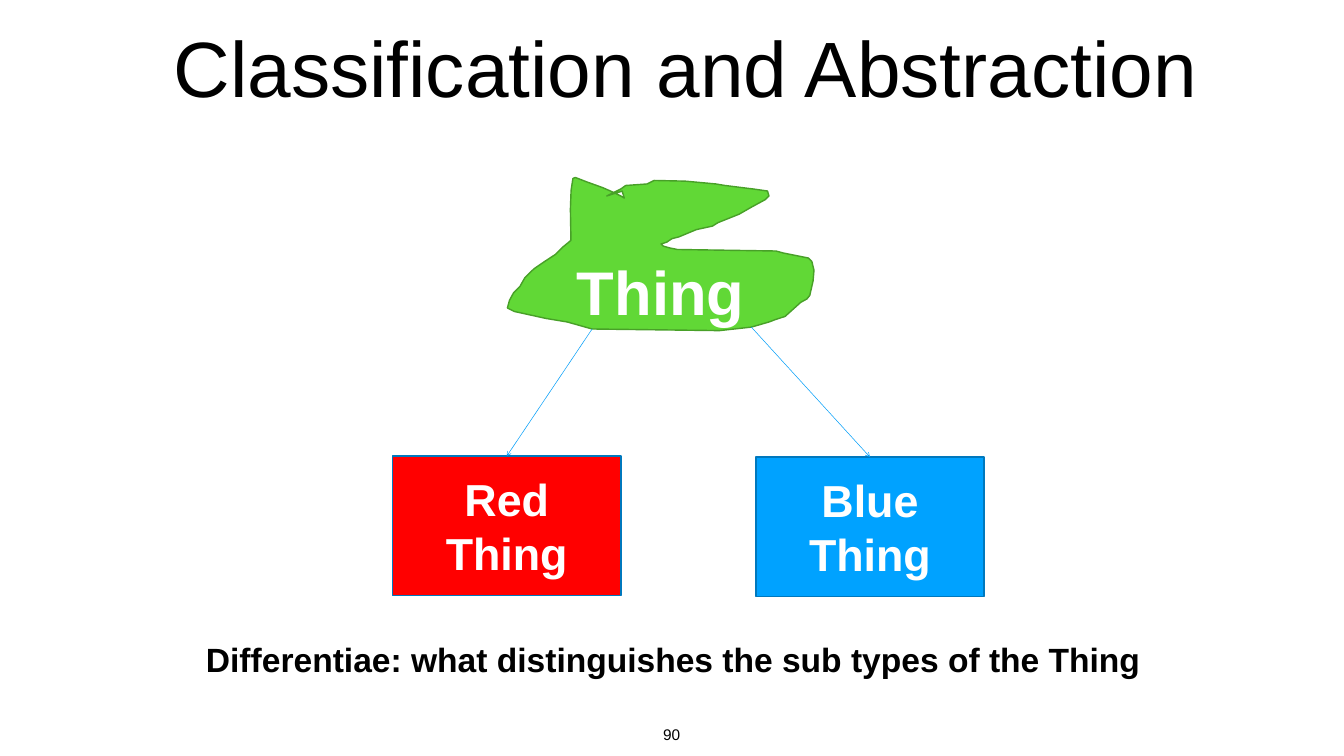
import dataclasses
import typing

import lxml.etree
import pptx
import pptx.dml.color
import pptx.enum.shapes
import pptx.enum.text
import pptx.oxml.ns
import pptx.util

Pt = pptx.util.Pt
Align = pptx.enum.text.PP_ALIGN
Anchor = pptx.enum.text.MSO_ANCHOR
Fit = pptx.enum.text.MSO_AUTO_SIZE


@dataclasses.dataclass(frozen=True)
class Theme:
    font: str = "Arial"
    black: str = "000000"
    white: str = "FFFFFF"
    green: str = "61D836"
    moss: str = "48A028"
    red: str = "FF0000"
    blue: str = "00A2FF"
    navy: str = "0078BD"
    sky: str = "009EF9"
    title: int = 112
    root: int = 88
    kind: int = 64
    note: int = 48
    page: int = 22
    edge: float = 2
    link: float = 0.75


THEME = Theme()


class Kind(typing.NamedTuple):
    text: str
    left: float
    top: float
    fill: str
    start: tuple[float, float]


class Note(typing.NamedTuple):
    text: str
    left: float
    top: float
    width: float
    height: float
    size: int
    bold: bool
    inset: tuple[float, float]


BOX = (326, 199.4)

KINDS = [
    Kind("Red Thing", 561, 651.6, THEME.red, (846, 470)),
    Kind("Blue Thing", 1080, 653, THEME.blue, (1073.5, 467.3)),
]

NOTES = [
    Note("Differentiae: what distinguishes the sub types of the Thing",
         279.4, 908.6, 1365.8, 65.5, THEME.note, True, (7.2, 3.6)),
    Note("90", 940.3, 1029.6, 38.9, 38.2, THEME.page, False, (5.76, 5.76)),
]

BLOB = [
    (866.9, 280), (887, 270), (894, 265), (924.5, 262.8), (934.6, 257.8),
    (979, 258.8), (1023, 262.8), (1036, 265), (1076.4, 270), (1096.6, 272.9),
    (1098.7, 280), (1093.7, 285), (1073.5, 296), (1056, 306), (1026, 318),
    (1018, 323), (995, 328), (970, 338.4), (960, 341), (952.6, 346),
    (944.6, 348.5), (947.5, 351.5), (956, 354), (967.7, 356.4),
    (1108.8, 358.6), (1119, 361.4), (1155, 368.6), (1160, 373.7),
    (1163, 386), (1161.7, 401.3), (1157, 422), (1153, 427), (1144, 432),
    (1121.8, 452), (1106.6, 457), (1098.7, 460), (1073.5, 467.3),
    (1028, 472.3), (846, 470), (810.7, 460), (780.5, 455), (735, 445),
    (725, 440), (728, 429), (734, 418), (743, 409), (750, 396.7),
    (763, 384), (778, 373.7), (793.4, 363.6), (803.5, 353.5),
    (815.8, 343.4), (815, 299), (816, 272), (818.6, 255), (822, 253.5),
    (838.8, 260), (861, 268), (877, 275), (887, 280), (892, 283), (889, 273),
]


def tint(code: str) -> pptx.dml.color.RGBColor:
    return pptx.dml.color.RGBColor.from_string(code)


def write(shape, text: str, size: int, color: str, bold: bool,
          anchor, inset: tuple[float, float] = (7.2, 3.6)) -> None:
    frame = shape.text_frame
    frame.text = text
    frame.vertical_anchor = anchor
    frame.margin_left = frame.margin_right = Pt(inset[0])
    frame.margin_top = frame.margin_bottom = Pt(inset[1])
    line = frame.paragraphs[0]
    line.alignment = Align.CENTER
    font = line.runs[0].font
    font.name = THEME.font
    font.size = Pt(size)
    font.bold = bold
    font.color.rgb = tint(color)


def paint(shape, fill: str, edge: str) -> None:
    shape.shadow.inherit = False
    shape.fill.solid()
    shape.fill.fore_color.rgb = tint(fill)
    shape.line.color.rgb = tint(edge)
    shape.line.width = Pt(THEME.edge)


def add_title(slide, text: str) -> None:
    title = slide.shapes.title
    title.left, title.top = Pt(195.8), Pt(0)
    title.width, title.height = Pt(1566.7), Pt(187.9)
    write(title, text, THEME.title, THEME.black, False,
          Anchor.MIDDLE, (5.76, 5.76))
    title.text_frame.auto_size = Fit.NONE


def add_blob(slide, text: str) -> None:
    path = slide.shapes.build_freeform(
        Pt(BLOB[0][0]), Pt(BLOB[0][1]), scale=1.0)
    path.add_line_segments([(Pt(x), Pt(y)) for x, y in BLOB[1:]], close=True)
    blob = path.convert_to_shape()
    paint(blob, THEME.green, THEME.moss)
    write(blob, text, THEME.root, THEME.white, True, Anchor.BOTTOM)


def add_kind(slide, kind: Kind):
    box = slide.shapes.add_shape(
        pptx.enum.shapes.MSO_SHAPE.RECTANGLE,
        Pt(kind.left), Pt(kind.top), Pt(BOX[0]), Pt(BOX[1]))
    paint(box, kind.fill, THEME.navy)
    write(box, kind.text, THEME.kind, THEME.white, True, Anchor.MIDDLE)
    box.text_frame.word_wrap = True
    return box


def add_link(slide, start: tuple[float, float], box) -> None:
    x, y = start
    link = slide.shapes.add_connector(
        pptx.enum.shapes.MSO_CONNECTOR.STRAIGHT,
        Pt(x), Pt(y), box.left + box.width // 2, box.top)
    link.end_connect(box, 0)
    link.line.color.rgb = tint(THEME.sky)
    link.line.width = Pt(THEME.link)
    qn = pptx.oxml.ns.qn
    tail = lxml.etree.SubElement(link.line._get_or_add_ln(), qn("a:tailEnd"))
    tail.set("type", "arrow")
    lxml.etree.SubElement(link._element.spPr, qn("a:effectLst"))


def add_note(slide, note: Note) -> None:
    box = slide.shapes.add_textbox(
        Pt(note.left), Pt(note.top), Pt(note.width), Pt(note.height))
    write(box, note.text, note.size, THEME.black, note.bold,
          Anchor.TOP, note.inset)
    box.text_frame.word_wrap = False
    box.text_frame.auto_size = Fit.SHAPE_TO_FIT_TEXT


def main() -> None:
    deck = pptx.Presentation()
    deck.slide_width, deck.slide_height = Pt(1920.24), Pt(1080)
    slide = deck.slides.add_slide(deck.slide_layouts[5])
    add_title(slide, "Classification and Abstraction")
    add_blob(slide, "Thing")
    boxes = [add_kind(slide, kind) for kind in KINDS]
    for kind, box in zip(KINDS, boxes):
        add_link(slide, kind.start, box)
    for note in NOTES:
        add_note(slide, note)
    deck.save("out.pptx")


if __name__ == "__main__":
    main()
